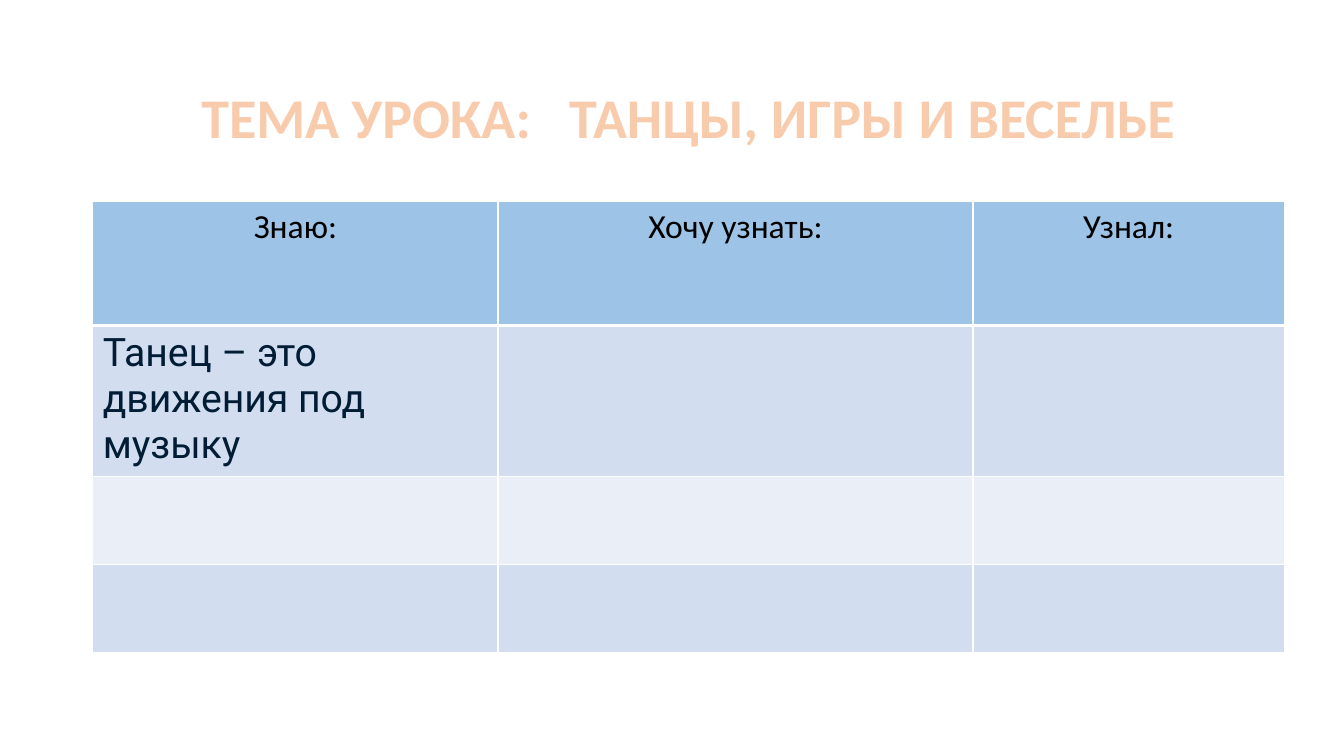
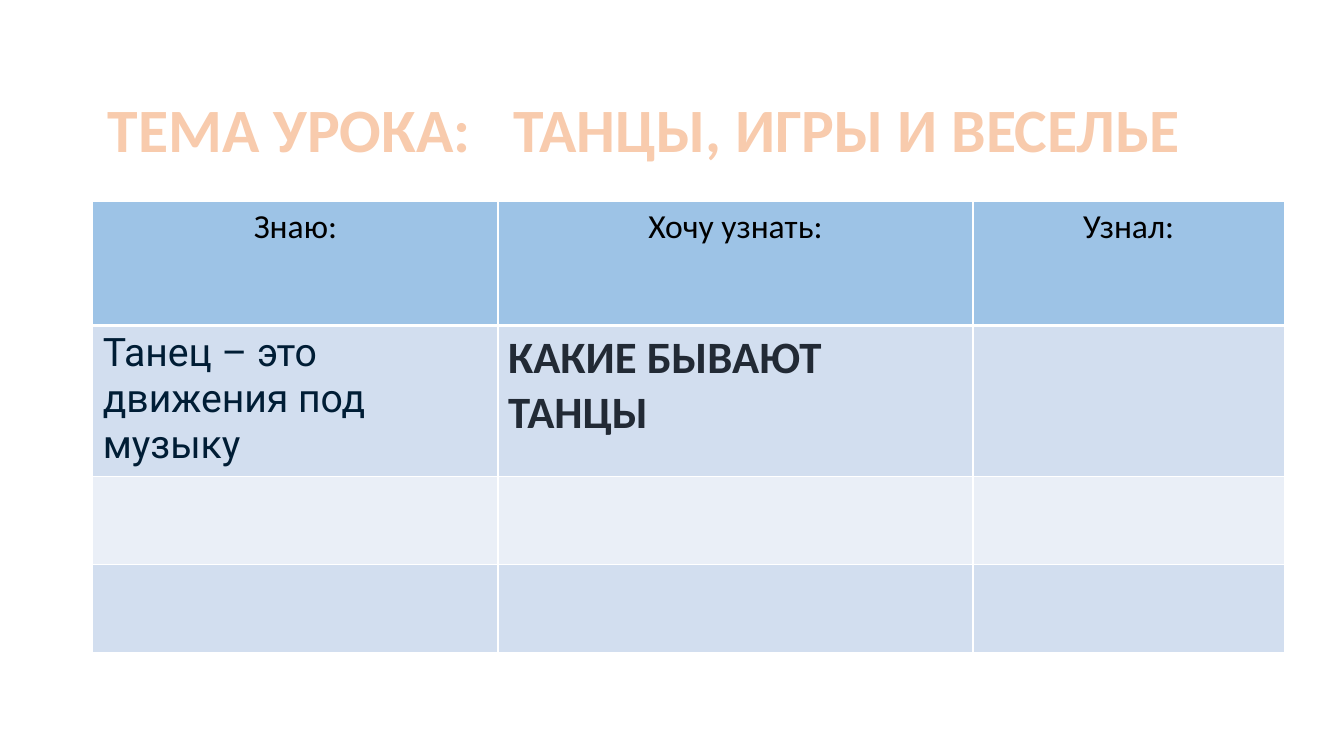
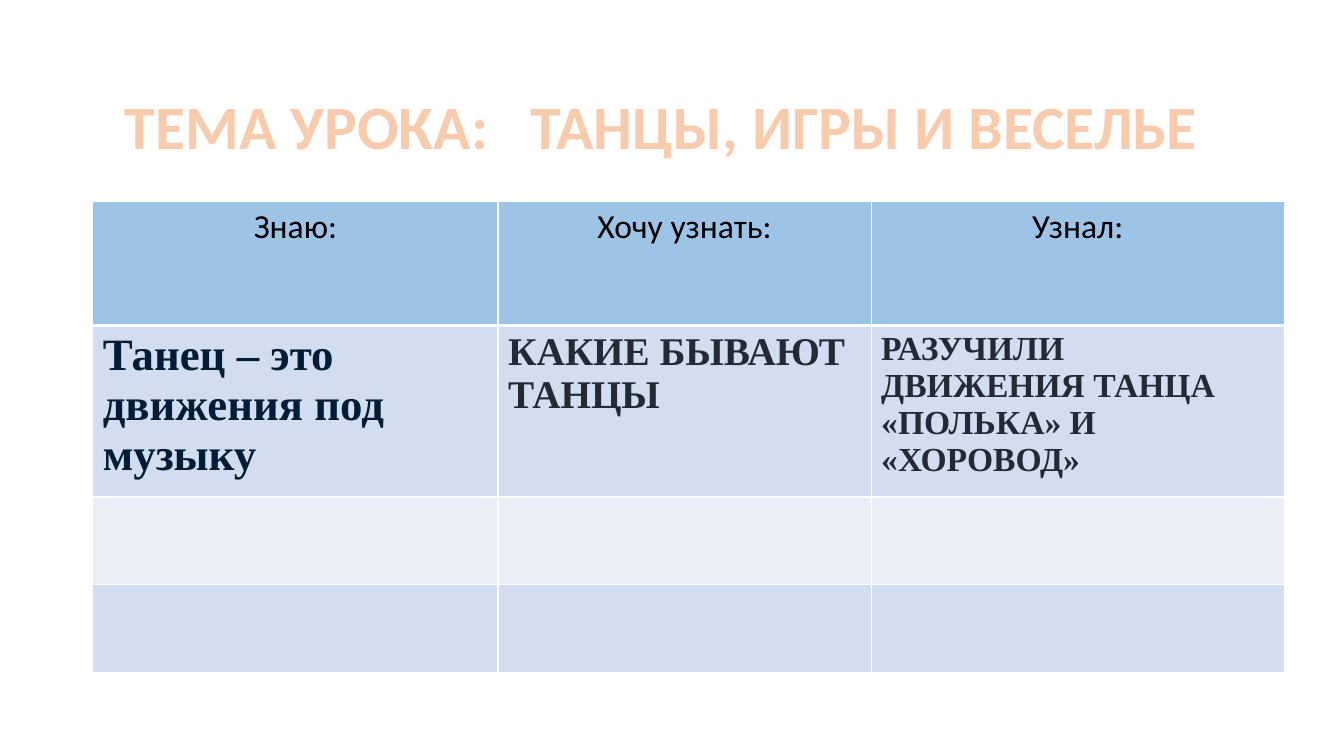
from dataclasses import dataclass

from lxml import etree
from pptx import Presentation
from pptx.dml.color import RGBColor
from pptx.enum.text import MSO_ANCHOR, MSO_AUTO_SIZE, PP_ALIGN
from pptx.oxml.ns import qn
from pptx.util import Inches, Pt

CENTER, LEFT = PP_ALIGN.CENTER, PP_ALIGN.LEFT
TOP = MSO_ANCHOR.TOP
FIT_SHAPE = MSO_AUTO_SIZE.SHAPE_TO_FIT_TEXT
TITLE_ONLY = 5


@dataclass(frozen=True)
class Theme:
    """Colours, fonts and sizes shared by all slides."""

    title: str = "F8CBAD"
    outline: str = "ED7D31"
    header: str = "9DC3E6"
    bands: tuple = ("D2DEEF", "EAEFF7")
    border: str = "FFFFFF"
    black: str = "000000"
    navy: str = "001D35"
    slate: str = "222A35"
    sans: str = "Calibri"
    web: str = "Roboto"
    serif: str = "Times New Roman"
    small: int = 24
    medium: int = 28
    large: int = 32
    title_small: int = 40
    title_large: int = 44
    outline_width: float = 1.75
    thin: int = 1
    thick: int = 3


THEME = Theme()
TITLE_PARTS = ("ТЕМА УРОКА:", "ТАНЦЫ, ИГРЫ И ВЕСЕЛЬЕ")
HEADERS = ("Знаю:", "Хочу узнать:", "Узнал:")
KNOWN = "Танец – это движения под музыку"
WANTED = "КАКИЕ БЫВАЮТ ТАНЦЫ"
LEARNED = "РАЗУЧИЛИ ДВИЖЕНИЯ ТАНЦА «ПОЛЬКА» И «ХОРОВОД»"
ROW_HEIGHTS = (1.23, 0.87, 0.87, 0.87)
WIDE_MIDDLE = (4.02, 4.71, 3.09)
EVEN_COLUMNS = (4.02, 3.7, 4.1)


def add_line(parent, tag, color, width):
    """Add a solid line element to its parent."""
    line = etree.SubElement(parent, qn(tag), w=str(Pt(width)))
    fill = etree.SubElement(line, qn("a:solidFill"))
    etree.SubElement(fill, qn("a:srgbClr"), val=color)
    return line


def write(para, text, size, color, font=THEME.sans, bold=False, align=LEFT,
          outline=None, spacing=0):
    """Add formatted text to a paragraph."""
    para.alignment = align
    span = para.add_run()
    span.text = text
    span.font.size = Pt(size)
    span.font.name = font
    span.font.bold = bold
    span.font.color.rgb = RGBColor.from_string(color)
    properties = span.font._element
    if spacing:
        properties.set("spc", str(round(spacing * 100)))
    if outline:
        properties.insert(0, add_line(properties, "a:ln", outline, THEME.outline_width))


class LessonDeck:
    """Builds lesson slides in one style."""

    def __init__(self, theme):
        """Start an empty widescreen deck."""
        self.theme = theme
        self.deck = Presentation()
        self.deck.slide_width = Inches(13.33)
        self.deck.slide_height = Inches(7.5)
        self.page = None

    def add_page(self):
        """Open a new slide."""
        layout = self.deck.slide_layouts[TITLE_ONLY]
        self.page = self.deck.slides.add_slide(layout)

    def add_title(self, place, size, wrap):
        """Place the lesson title, widening the gap after its label."""
        box = self.page.shapes.title
        box.left, box.top, box.width, box.height = map(Inches, place)
        frame = box.text_frame
        frame.word_wrap = wrap
        frame.auto_size = FIT_SHAPE
        frame.vertical_anchor = TOP
        label, topic = TITLE_PARTS
        for text, spacing in ((label, 0), (" ", 0.45 * size), (topic, 0)):
            write(frame.paragraphs[0], text, size, self.theme.title, bold=True,
                  align=CENTER, outline=self.theme.outline, spacing=spacing)

    def style_cell(self, cell, color, bottom):
        """Give a cell its borders and fill."""
        properties = cell._tc.get_or_add_tcPr()
        for side in "LRTB":
            width = bottom if side == "B" else self.theme.thin
            add_line(properties, f"a:ln{side}", self.theme.border, width)
        cell.fill.solid()
        cell.fill.fore_color.rgb = RGBColor.from_string(color)

    def add_table(self, widths, height, answers):
        """Add the table of headings and answers."""
        theme = self.theme
        frame = self.page.shapes.add_table(
            len(ROW_HEIGHTS), len(widths), Inches(0.92), Inches(2),
            Inches(sum(widths)), Inches(height))
        table = frame.table
        table.first_row = table.horz_banding = False
        for column, width in zip(table.columns, widths):
            column.width = Inches(width)
        for index, (row, row_height) in enumerate(zip(table.rows, ROW_HEIGHTS)):
            row.height = Inches(row_height)
            color = theme.bands[(index - 1) % 2] if index else theme.header
            bottom = theme.thin if index else theme.thick
            for cell in row.cells:
                self.style_cell(cell, color, bottom)
        frame.height = Inches(height)
        for column, text in enumerate(HEADERS):
            write(table.cell(0, column).text_frame.paragraphs[0], text,
                  theme.small, theme.black, align=CENTER)
        for column, (text, style) in enumerate(answers):
            write(table.cell(1, column).text_frame.paragraphs[0], text, **style)


def main():
    """Build and save the lesson."""
    lesson = LessonDeck(THEME)
    known = (KNOWN, dict(size=THEME.medium, color=THEME.navy, font=THEME.web))
    wanted = (WANTED, dict(size=THEME.large, color=THEME.slate, bold=True))
    serif = dict(font=THEME.serif, bold=True)
    summary = (
        (KNOWN, dict(size=THEME.large, color=THEME.navy, **serif)),
        (WANTED, dict(size=THEME.medium, color=THEME.slate, **serif)),
        (LEARNED, dict(size=THEME.small, color=THEME.slate, **serif)),
    )
    pages = (
        ((1.67, 0.77, 10.31, 0.77), THEME.title_small, True, WIDE_MIDDLE, 4.48, (known,)),
        ((0.92, 0.85, 10.94, 0.84), THEME.title_large, False, WIDE_MIDDLE, 4.48, (known, wanted)),
        ((1.09, 0.82, 10.94, 0.84), THEME.title_large, False, EVEN_COLUMNS, 4.68, summary),
    )
    for place, size, wrap, widths, height, answers in pages:
        lesson.add_page()
        lesson.add_table(widths, height, answers)
        lesson.add_title(place, size, wrap)
    lesson.deck.save("out.pptx")


if __name__ == "__main__":
    main()
